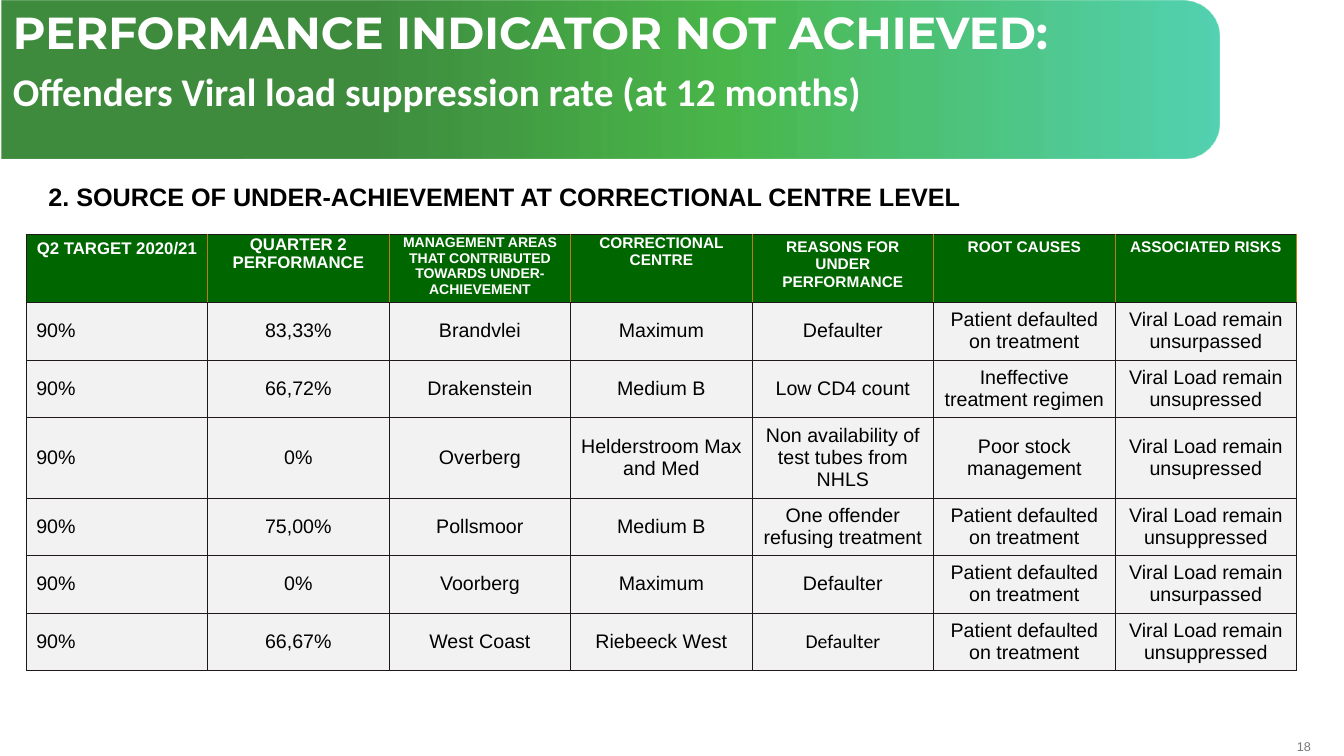
"""Build the slide on the viral load suppression indicator that was not achieved."""
from dataclasses import dataclass

from lxml import etree
from pptx import Presentation
from pptx.dml.color import RGBColor
from pptx.enum.shapes import MSO_SHAPE
from pptx.enum.text import MSO_ANCHOR, PP_ALIGN
from pptx.oxml.ns import qn
from pptx.util import Inches, Pt

LEFT, CENTER, RIGHT = PP_ALIGN.LEFT, PP_ALIGN.CENTER, PP_ALIGN.RIGHT
TOP, MIDDLE = MSO_ANCHOR.TOP, MSO_ANCHOR.MIDDLE
BANNER_SHAPE = MSO_SHAPE.ROUND_2_SAME_RECTANGLE

WHITE, BLACK, GREY = "FFFFFF", "000000", "77787B"
GREEN, PALE = "006600", "F2F2F2"
RULE, ORANGE = "1E1918", "BF7B17"
COLUMN_WIDTH = 1.8


@dataclass(frozen=True)
class Style:
    size: float
    color: str = BLACK
    bold: bool = False
    font: str = "Arial"
    align: PP_ALIGN = CENTER


@dataclass(frozen=True)
class Heading:
    text: str
    size: float
    tight: bool = False


@dataclass(frozen=True)
class Centre:
    performance: str
    area: str
    centre: str
    reason: str
    cause: str
    risk: str
    height: float = 0.57
    reason_font: str = "Arial"


@dataclass(frozen=True)
class GradientStop:
    position: int
    color: str
    opacity: int


HEADINGS = [
    Heading("Q2 TARGET 2020/21", 12),
    Heading("QUARTER 2\vPERFORMANCE", 12, True),
    Heading("MANAGEMENT AREAS THAT CONTRIBUTED TOWARDS UNDER-ACHIEVEMENT", 10, True),
    Heading("CORRECTIONAL CENTRE", 11, True),
    Heading("REASONS FOR UNDER\nPERFORMANCE", 11),
    Heading("ROOT CAUSES", 11),
    Heading("ASSOCIATED RISKS", 11),
]
DEFAULTED = "Patient defaulted on treatment"
CENTRES = [
    Centre("83,33%", "Brandvlei", "Maximum", "Defaulter", DEFAULTED,
           "Viral Load remain unsurpassed"),
    Centre("66,72%", "Drakenstein", "Medium B", "Low CD4 count",
           "Ineffective treatment regimen", "Viral Load remain unsupressed"),
    Centre("0%", "Overberg", "Helderstroom Max and Med",
           "Non availability of test tubes from NHLS", "Poor stock management",
           "Viral Load remain unsupressed", height=0.79),
    Centre("75,00%", "Pollsmoor", "Medium B", "One offender refusing treatment",
           DEFAULTED, "Viral Load remain unsuppressed"),
    Centre("0%", "Voorberg", "Maximum", "Defaulter", DEFAULTED,
           "Viral Load remain unsurpassed"),
    Centre("66,67%", "West Coast", "Riebeeck West", "Defaulter", DEFAULTED,
           "Viral Load remain unsuppressed", reason_font="Calibri"),
]
BANNER_STOPS = [
    GradientStop(30, "006600", 75),
    GradientStop(59, "009900", 71),
    GradientStop(100, "00BC8D", 67),
]


def rgb(color: str) -> RGBColor:
    """Turn a hex string into a colour."""
    return RGBColor.from_string(color)


def format_paragraph(paragraph, style: Style) -> None:
    """Apply a style to a paragraph and its runs."""
    paragraph.alignment = style.align
    for run in paragraph.runs:
        run.font.size = Pt(style.size)
        run.font.name = style.font
        run.font.bold = style.bold
        run.font.color.rgb = rgb(style.color)


def add_text(slide, left: float, top: float, width: float, height: float,
             text: str, styles: list[Style]):
    """Add a wrapping text box with one style per paragraph."""
    frame = slide.shapes.add_textbox(
        Inches(left), Inches(top), Inches(width), Inches(height)).text_frame
    frame.word_wrap = True
    frame.text = text
    for paragraph, style in zip(frame.paragraphs, styles):
        format_paragraph(paragraph, style)
    return frame


def add_banner(slide) -> None:
    """Draw the turned green banner with its translucent gradient."""
    banner = slide.shapes.add_shape(
        BANNER_SHAPE, Inches(5.27), Inches(-5.25), Inches(1.57), Inches(12.08))
    banner.rotation = 90
    banner.adjustments[0] = 0.233
    banner.adjustments[1] = 0
    banner.shadow.inherit = False
    banner.line.fill.background()
    banner.fill.gradient()
    gradient = banner.fill._xPr.find(qn("a:gradFill"))
    gradient.set("rotWithShape", "1")
    gradient.find(qn("a:lin")).set("ang", str(270 * 60000))
    stop_list = gradient.find(qn("a:gsLst"))
    for old_stop in list(stop_list):
        stop_list.remove(old_stop)
    for stop in BANNER_STOPS:
        entry = etree.SubElement(stop_list, qn("a:gs"), pos=str(stop.position * 1000))
        color = etree.SubElement(entry, qn("a:srgbClr"), val=stop.color)
        etree.SubElement(color, qn("a:alpha"), val=str(stop.opacity * 1000))


def set_borders(cell, left: str, right: str) -> None:
    """Rule all four sides of a cell with half-point lines."""
    properties = cell._tc.get_or_add_tcPr()
    for side, color in (("L", left), ("R", right), ("T", RULE), ("B", RULE)):
        line = etree.SubElement(properties, qn(f"a:ln{side}"), w=str(Pt(0.5)))
        fill = etree.SubElement(line, qn("a:solidFill"))
        etree.SubElement(fill, qn("a:srgbClr"), val=color)


def fill_cell(cell, text: str, style: Style, fill: str, anchor: MSO_ANCHOR,
              left: str = RULE, right: str = RULE) -> None:
    """Write, rule and fill one table cell."""
    cell.text_frame.text = text
    for paragraph in cell.text_frame.paragraphs:
        format_paragraph(paragraph, style)
    cell.vertical_anchor = anchor
    set_borders(cell, left, right)
    cell.fill.solid()
    cell.fill.fore_color.rgb = rgb(fill)


def add_centre_table(slide) -> None:
    """Add the table of under-achieving correctional centres."""
    heights = [0.68] + [centre.height for centre in CENTRES]
    table = slide.shapes.add_table(
        len(heights), len(HEADINGS), Inches(0.26), Inches(2.32),
        Inches(COLUMN_WIDTH * len(HEADINGS)), Inches(sum(heights))).table
    table.first_row = table.horz_banding = False
    for column in table.columns:
        column.width = Inches(COLUMN_WIDTH)
    for row, height in zip(table.rows, heights):
        row.height = Inches(height)
    for index, heading in enumerate(HEADINGS):
        cell = table.cell(0, index)
        fill_cell(cell, heading.text, Style(heading.size, WHITE, True), GREEN, TOP,
                  ORANGE if index else RULE, ORANGE)
        if heading.tight:
            cell.margin_left = cell.margin_top = cell.margin_right = Inches(0.01)
            cell.margin_bottom = 0
    for row_index, entry in enumerate(CENTRES, start=1):
        fill_cell(table.cell(row_index, 0), "90%", Style(14, align=LEFT), PALE, MIDDLE)
        values = (entry.performance, entry.area, entry.centre,
                  entry.reason, entry.cause, entry.risk)
        for index, value in enumerate(values, start=1):
            font = entry.reason_font if value == entry.reason else "Arial"
            fill_cell(table.cell(row_index, index), value, Style(14, font=font),
                      PALE, MIDDLE)


def main() -> None:
    """Build and save the slide."""
    deck = Presentation()
    deck.slide_width, deck.slide_height = Inches(13.33), Inches(7.5)
    slide = deck.slides.add_slide(deck.slide_layouts[6])
    number = add_text(slide, 12.61, 7.33, 0.39, 0.15, "18",
                      [Style(9, GREY, align=RIGHT)])
    number.margin_left = number.margin_top = number.margin_right = number.margin_bottom = 0
    number.vertical_anchor = MIDDLE
    add_banner(slide)
    section = add_text(slide, 0.03, 1.75, 10, 0.4,
                       "2. SOURCE OF UNDER-ACHIEVEMENT AT CORRECTIONAL CENTRE LEVEL",
                       [Style(18, bold=True, align=LEFT)])
    section.margin_left = Inches(0.45)
    add_centre_table(slide)
    title = add_text(
        slide, 0.03, 0.06, 11.98, 0.57,
        "PERFORMANCE INDICATOR NOT ACHIEVED:\n"
        "Offenders Viral load suppression rate (at 12 months)",
        [Style(32, WHITE, True, "Montserrat", LEFT),
         Style(28, WHITE, True, "Calibri", LEFT)])
    title.paragraphs[0].line_spacing = 0.9
    for paragraph in title.paragraphs:
        paragraph.space_after = Pt(6)
    deck.save("out.pptx")


if __name__ == "__main__":
    main()
